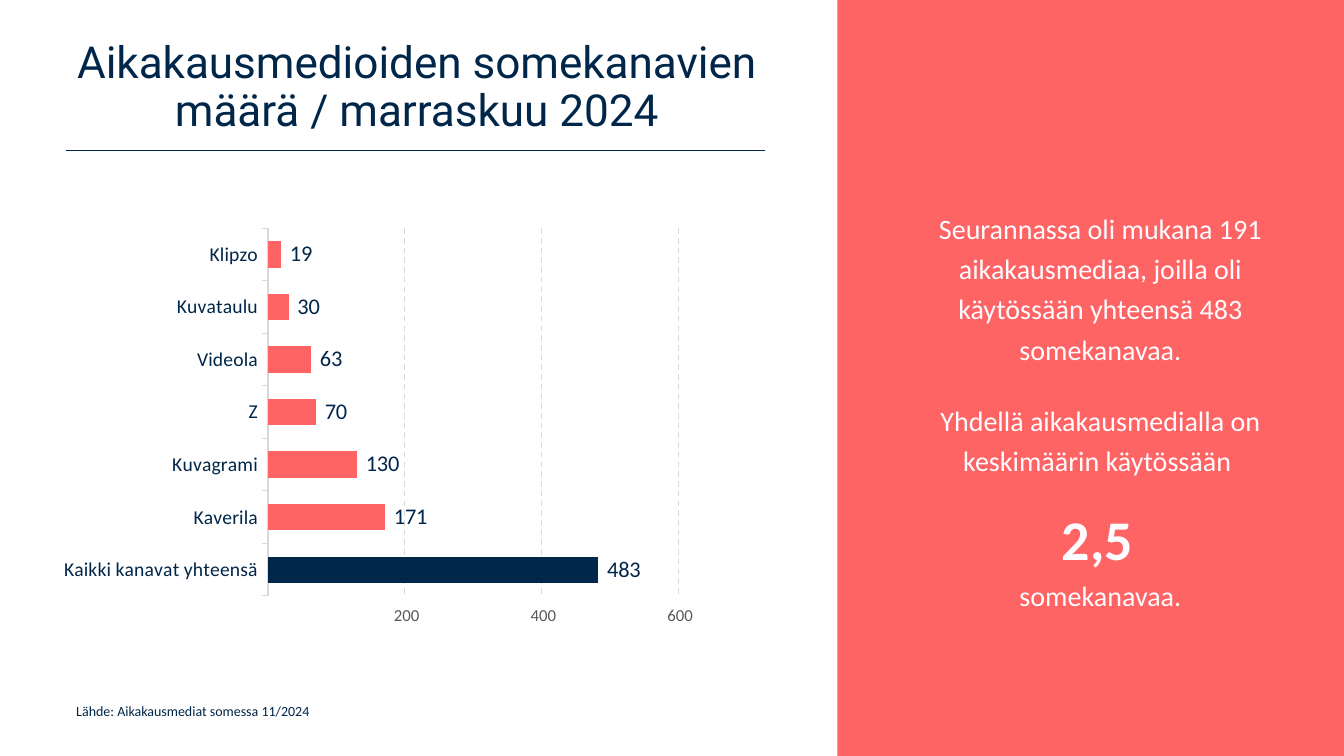
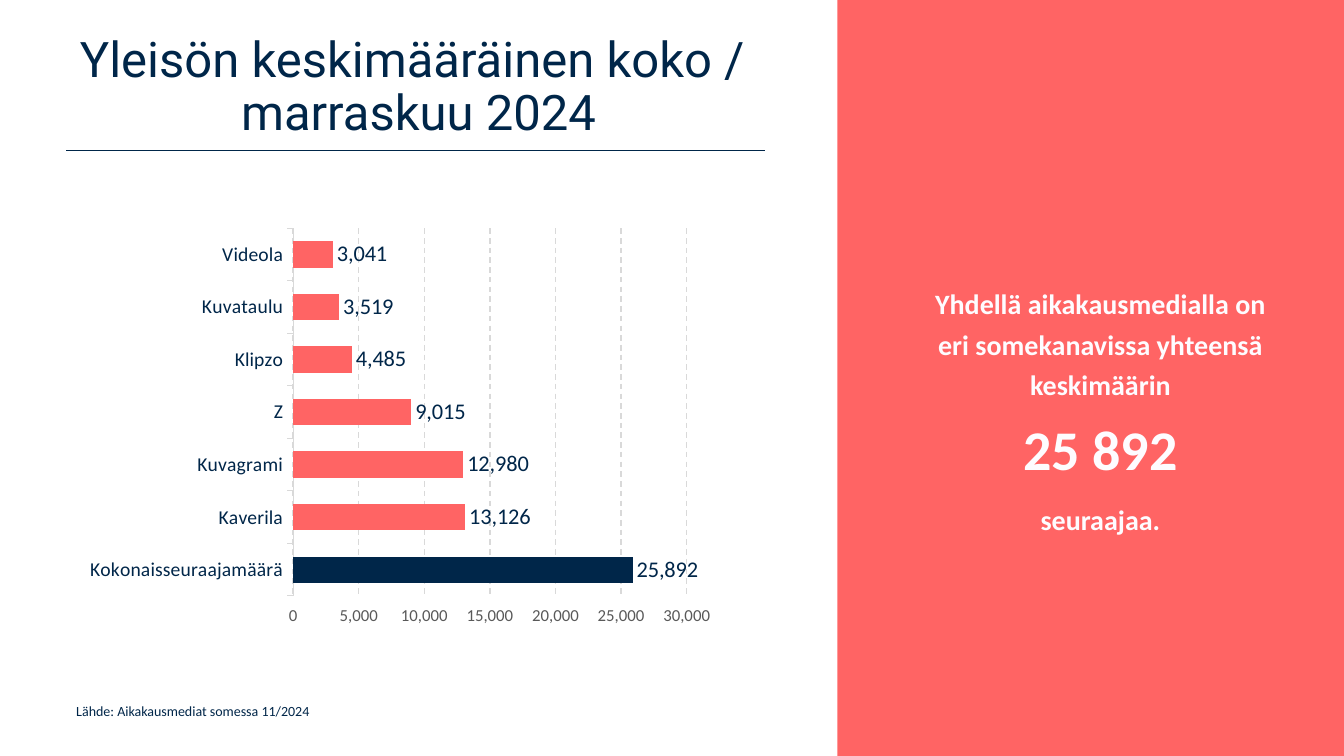
from lxml.etree import SubElement
from pptx import Presentation
from pptx.chart.data import CategoryChartData
from pptx.dml.color import RGBColor
from pptx.enum.chart import XL_CHART_TYPE, XL_LABEL_POSITION, XL_TICK_MARK
from pptx.enum.dml import MSO_LINE
from pptx.enum.shapes import MSO_CONNECTOR, MSO_SHAPE
from pptx.enum.text import MSO_ANCHOR, PP_ALIGN
from pptx.oxml import parse_xml
from pptx.oxml.ns import nsdecls, qn
from pptx.util import Inches, Pt

COLORS = {"coral": "FF6464", "navy": "002649", "light": "FEFCFF",
          "grid": "D9D9D9", "gray": "595959"}
HEADING, BODY = "Roboto", "Calibri"
COLUMNS, ROWS = 16, 9
PANEL_LEFT = 9.97
MARGIN = 0.79
SOURCE = "Lähde: Aikakausmediat somessa 11/2024"


def rgb(name):
    return RGBColor.from_string(COLORS[name])


def style_font(font, size, color, face=BODY, bold=False):
    font.size, font.name, font.bold = Pt(size), face, bold
    font.color.rgb = rgb(color)


class Deck:
    """Holds the presentation, its grid and the slide being built."""

    def __init__(self):
        self.presentation = Presentation()
        self.presentation.slide_width = Inches(40 / 3)
        self.presentation.slide_height = Inches(7.5)
        self.slide = None

    def grid(self, *lengths):
        """Turn alternating column and row counts into slide lengths."""
        units = (self.presentation.slide_width / COLUMNS,
                 self.presentation.slide_height / ROWS)
        return [round(length * units[i % 2]) for i, length in enumerate(lengths)]

    def new_slide(self):
        self.slide = self.presentation.slides.add_slide(
            self.presentation.slide_layouts[6])
        # Side panel
        panel = self.slide.shapes.add_shape(
            MSO_SHAPE.RECTANGLE,
            *self.grid(PANEL_LEFT, 0, COLUMNS - PANEL_LEFT, ROWS))
        panel.shadow.inherit = False
        panel.fill.solid()
        panel.fill.fore_color.rgb = rgb("coral")
        panel.line.fill.background()
        # Rule under the title
        rule = self.slide.shapes.add_connector(
            MSO_CONNECTOR.STRAIGHT, *self.grid(MARGIN, 1.79, 9.11, 1.79))
        rule.line.color.rgb = rgb("navy")
        rule.line.width = Pt(1)
        SubElement(rule._element.spPr, qn("a:effectLst"))
        # Source line
        self.text((MARGIN, 8.3, 7.9, 0.53), [[(SOURCE, 10)]], "navy",
                  align=PP_ALIGN.LEFT, anchor=MSO_ANCHOR.TOP)

    def text(self, place, paragraphs, color, face=BODY, spacing=1.0, gaps=(),
             align=PP_ALIGN.CENTER, anchor=MSO_ANCHOR.MIDDLE):
        """Each paragraph lists (text, size[, bold]) runs; None breaks a line."""
        frame = self.slide.shapes.add_textbox(*self.grid(*place)).text_frame
        frame.word_wrap = True
        frame.vertical_anchor = anchor
        for index, runs in enumerate(paragraphs):
            paragraph = frame.add_paragraph() if index else frame.paragraphs[0]
            paragraph.alignment = align
            paragraph.line_spacing = spacing
            if index:
                paragraph.space_before = Pt(gaps[index - 1])
            for item in runs:
                if item is None:
                    paragraph.add_line_break()
                    continue
                words, size, *bold = item
                run = paragraph.add_run()
                run.text = words
                style_font(run.font, size, color, face, bool(bold and bold[0]))

    def title(self, runs, left, width):
        self.text((left, 0.3, width, 1.5), [runs], "navy", HEADING, 0.9)

    def message(self, paragraphs, gaps):
        self.text((10.85, 1.8, 4.5, 6.12), paragraphs, "light",
                  spacing=1.2, gaps=gaps)

    def bar_chart(self, rows, number_format, maximum, step, plot_left, plot_width):
        data = CategoryChartData(number_format=number_format)
        data.categories = [name for name, _ in rows]
        data.add_series("Series 1", [value for _, value in rows])
        chart = self.slide.shapes.add_chart(
            XL_CHART_TYPE.BAR_CLUSTERED,
            *self.grid(0, 2.25, PANEL_LEFT, 5.21), data).chart
        chart.has_legend = chart.has_title = False
        style_font(chart.font, 10, "navy")

        # Bars: the total, first in the data, stands out
        plot = chart.plots[0]
        plot.gap_width = 100
        plot.vary_by_categories = False
        series = plot.series[0]
        for target, color in ((series, "coral"), (series.points[0], "navy")):
            target.format.fill.solid()
            target.format.fill.fore_color.rgb = rgb(color)
        plot.has_data_labels = True
        labels = plot.data_labels
        labels.show_value = True
        labels.position = XL_LABEL_POSITION.OUTSIDE_END
        labels.number_format = number_format
        labels.number_format_is_linked = False
        style_font(labels.font, 16, "navy")

        # Axes
        category_axis, value_axis = chart.category_axis, chart.value_axis
        for axis, size, color in ((category_axis, 14, "navy"),
                                  (value_axis, 12, "gray")):
            axis.major_tick_mark = XL_TICK_MARK.OUTSIDE
            axis.minor_tick_mark = XL_TICK_MARK.NONE
            style_font(axis.tick_labels.font, size, color)
        category_axis.format.line.color.rgb = rgb("grid")
        category_axis.format.line.width = Pt(0.75)
        value_axis.format.line.fill.background()
        value_axis.minimum_scale, value_axis.maximum_scale = 0, maximum
        value_axis.major_unit = step
        value_axis.tick_labels.number_format = number_format
        value_axis.tick_labels.number_format_is_linked = False
        value_axis.has_major_gridlines = True
        gridline = value_axis.major_gridlines.format.line
        gridline.color.rgb = rgb("grid")
        gridline.width = Pt(1)
        gridline.dash_style = MSO_LINE.DASH

        # Fixed inner plot area, as shares of the chart
        area = chart._chartSpace.chart.plotArea
        for layout in area.findall(qn("c:layout")):
            area.remove(layout)
        shares = {"x": plot_left, "y": 0.09, "w": plot_width, "h": 0.84}
        area.insert(0, parse_xml(
            f'<c:layout {nsdecls("c")}><c:manualLayout>'
            '<c:layoutTarget val="inner"/>'
            '<c:xMode val="edge"/><c:yMode val="edge"/>'
            + "".join(f'<c:{key} val="{share}"/>' for key, share in shares.items())
            + "</c:manualLayout></c:layout>"))


def channel_count(deck):
    deck.new_slide()
    deck.title([("Aikakausmedioiden somekanavien määrä / marraskuu 2024", 31.5)],
               MARGIN, 8.34)
    deck.bar_chart(
        [("Kaikki kanavat yhteensä", 483), ("Kaverila", 171), ("Kuvagrami", 130),
         ("Z", 70), ("Videola", 63), ("Kuvataulu", 30), ("Klipzo", 19)],
        r"#\ ##0;\-#\ ##0;;@", 600, 200, 0.32, 0.49)
    deck.message(
        [[("Seurannassa oli mukana 191 aikakausmediaa, joilla oli "
           "käytössään yhteensä 483 somekanavaa.", 20)],
         [("Yhdellä aikakausmedialla on keskimäärin käytössään ", 20)],
         [("2,5", 40, True), (" ", 20, True), None, ("somekanavaa.", 20)]],
        gaps=(22, 10))


def audience_size(deck):
    deck.new_slide()
    deck.title([("Yleisön keskimääräinen koko / ", 35), None,
                ("marraskuu 2024", 35)], 0, PANEL_LEFT)
    deck.bar_chart(
        [("Kokonaisseuraajamäärä", 25892), ("Kaverila", 13126),
         ("Kuvagrami", 12980), ("Z", 9015), ("Klipzo", 4485),
         ("Kuvataulu", 3519), ("Videola", 3041)],
        "#,##0", 30000, 5000, 0.35, 0.47)
    deck.message(
        [[("Yhdellä aikakausmedialla on eri somekanavissa yhteensä keskimäärin",
           20, True), None, ("25 892", 40, True)],
         [("seuraajaa.", 20, True)]],
        gaps=(10,))


def main():
    deck = Deck()
    channel_count(deck)
    audience_size(deck)
    deck.presentation.save("out.pptx")


if __name__ == "__main__":
    main()
